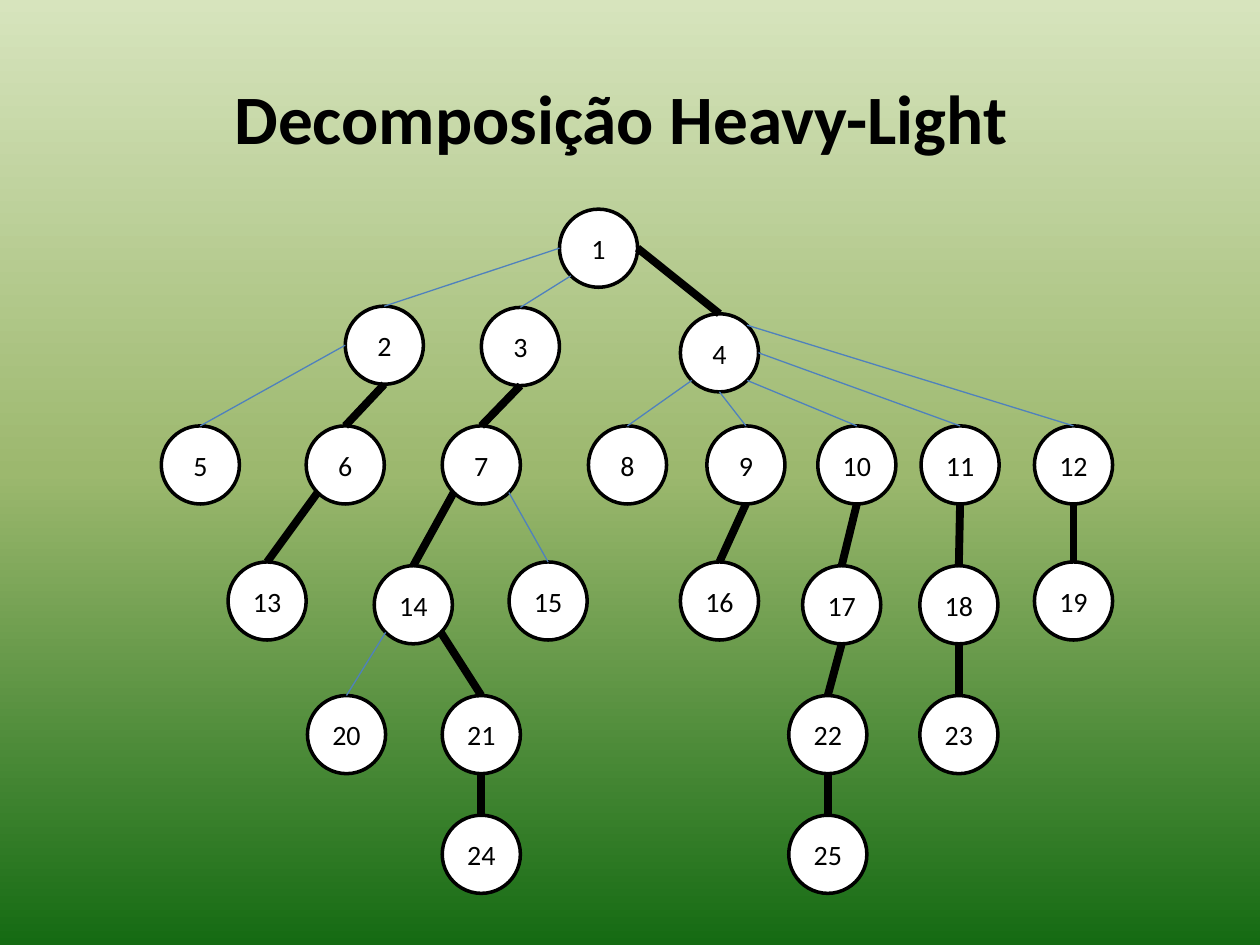
from copy import deepcopy
from math import cos, radians, sin

from lxml import etree
from pptx import Presentation
from pptx.dml.color import RGBColor
from pptx.enum.shapes import MSO_CONNECTOR as Connector, MSO_SHAPE as Shape
from pptx.enum.text import MSO_ANCHOR as Anchor, PP_ALIGN as Align
from pptx.oxml.ns import qn
from pptx.util import Inches, Pt

BLACK, WHITE, BLUE = "000000", "FFFFFF", "4F81BD"
DIAMETER = 0.62
RADIUS = DIAMETER / 2


def color(hex_value):
    return RGBColor.from_string(hex_value)


def write_text(shape, text, size=16, bold=False, margin=0, wrap=False):
    frame = shape.text_frame
    frame.word_wrap = wrap
    frame.vertical_anchor = Anchor.MIDDLE
    frame.margin_left = frame.margin_right = Inches(margin)
    frame.margin_top = frame.margin_bottom = Inches(0)
    paragraph = frame.paragraphs[0]
    paragraph.alignment = Align.CENTER
    run = paragraph.add_run()
    run.text = text
    run.font.name = "Calibri"
    run.font.size = Pt(size)
    run.font.bold = bold
    run.font.color.rgb = color(BLACK)


presentation = Presentation()
presentation.slide_width, presentation.slide_height = Inches(10), Inches(7.5)
slide = presentation.slides.add_slide(presentation.slide_layouts[5])

# Background: vertical gradient with three stops
background = slide.background.fill
background.gradient()
background.gradient_angle = 270
stop_list = slide.element.find(".//" + qn("a:gsLst"))
stop_list.insert(1, deepcopy(stop_list[0]))
stops = [(0, "D7E4BD"), (0.5, "9CB86E"), (1, "156B13")]
for stop, (position, hex_value) in zip(background.gradient_stops, stops):
    stop.position = position
    stop.color.rgb = color(hex_value)

# Title
title = slide.shapes.title
title.left, title.top = Inches(0.5), Inches(0.3)
title.width, title.height = Inches(9), Inches(1.25)
write_text(title, "Decomposição Heavy-Light", size=39.6, bold=True,
           margin=0.1, wrap=True)
title.text_frame.margin_right = Inches(0.24)

# Tree nodes: number -> left, top
positions = {
    1: (4.44, 1.66),
    2: (2.74, 2.43), 3: (3.82, 2.44), 4: (5.4, 2.49),
    5: (1.28, 3.38), 6: (2.43, 3.38), 7: (3.51, 3.38), 8: (4.67, 3.38),
    9: (5.61, 3.38), 10: (6.49, 3.38), 11: (7.31, 3.38), 12: (8.21, 3.38),
    13: (1.81, 4.46), 14: (2.97, 4.49), 15: (4.04, 4.46), 16: (5.4, 4.46),
    17: (6.37, 4.49), 18: (7.3, 4.49), 19: (8.21, 4.46),
    20: (2.44, 5.52), 21: (3.51, 5.52), 22: (6.26, 5.52), 23: (7.3, 5.52),
    24: (3.51, 6.47), 25: (6.26, 6.47),
}
nodes = {}
for number, (left, top) in positions.items():
    node = slide.shapes.add_shape(Shape.OVAL, Inches(left), Inches(top),
                                  Inches(DIAMETER), Inches(DIAMETER))
    node.shadow.inherit = False
    node.fill.solid()
    node.fill.fore_color.rgb = color(WHITE)
    node.line.color.rgb = color(BLACK)
    node.line.width = Pt(2)
    write_text(node, str(number))
    nodes[number] = node

# Edges: parent, child, angle where the edge leaves the parent (clockwise from right)
RIGHT, LOWER_RIGHT, BOTTOM, LOWER_LEFT, LEFT, UPPER_RIGHT = 0, 45, 90, 135, 180, 315
light_edges = [
    (1, 2, LEFT), (1, 3, LOWER_LEFT), (2, 5, LEFT),
    (4, 8, LOWER_LEFT), (4, 9, BOTTOM), (4, 10, LOWER_RIGHT),
    (4, 11, RIGHT), (4, 12, UPPER_RIGHT),
    (7, 15, LOWER_RIGHT), (14, 20, LOWER_LEFT),
]
heavy_edges = [
    (1, 4, RIGHT), (2, 6, BOTTOM), (3, 7, BOTTOM),
    (6, 13, LOWER_LEFT), (7, 14, LOWER_LEFT), (14, 21, LOWER_RIGHT),
    (9, 16, BOTTOM), (10, 17, BOTTOM), (11, 18, BOTTOM), (12, 19, BOTTOM),
    (17, 22, BOTTOM), (18, 23, BOTTOM), (21, 24, BOTTOM), (22, 25, BOTTOM),
]
for edges, hex_value, width in [(light_edges, BLUE, 0.75), (heavy_edges, BLACK, 4.5)]:
    for parent, child, angle in edges:
        left, top = positions[parent]
        start_x = left + RADIUS + RADIUS * cos(radians(angle))
        start_y = top + RADIUS + RADIUS * sin(radians(angle))
        child_left, child_top = positions[child]
        edge = slide.shapes.add_connector(
            Connector.STRAIGHT, Inches(start_x), Inches(start_y),
            Inches(child_left + RADIUS), Inches(child_top))
        edge.end_connect(nodes[child], 0)
        edge.line.color.rgb = color(hex_value)
        edge.line.width = Pt(width)
        etree.SubElement(edge.element.spPr, qn("a:effectLst"))

presentation.save("out.pptx")
